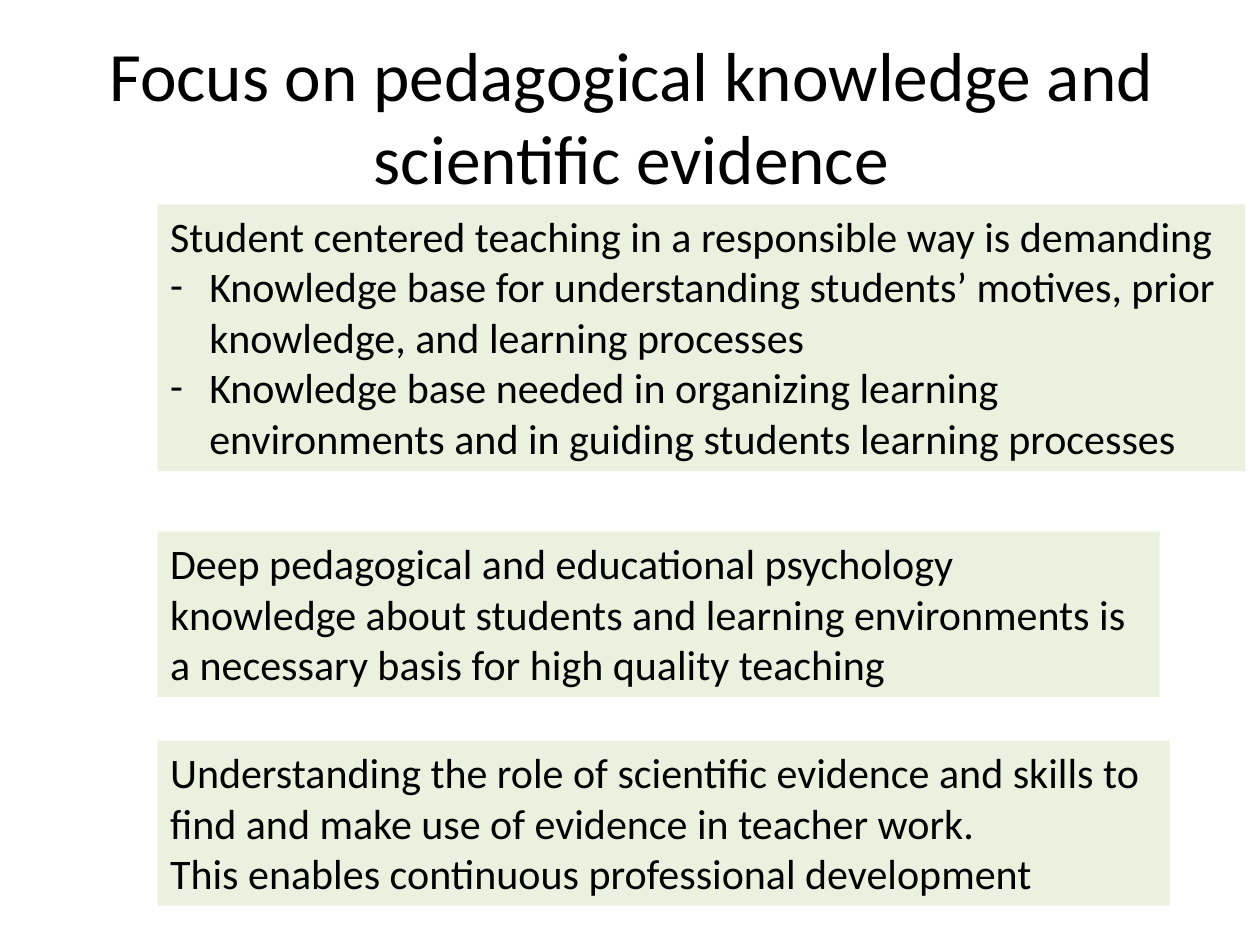
from lxml import etree
from pptx import Presentation
from pptx import util as u
from pptx.dml.color import RGBColor
from pptx.enum import text
from pptx.oxml.ns import qn

BLACK = RGBColor(0x00, 0x00, 0x00)
PALE_GREEN = RGBColor(0xEB, 0xF1, 0xDE)
PANEL_LEFT = 3.18


class SlideBuilder:
    font = "Calibri"
    title_size = 39.6
    body_size = 24
    hanging = u.Cm(0.79)

    def __init__(self, deck):
        self.slide = deck.slides.add_slide(deck.slide_layouts[6])

    def set_lines(self, box, lines, size):
        """Fill a box with one paragraph per line and style its runs."""
        frame = box.text_frame
        frame.word_wrap = True
        frame.text = "\n".join(lines)
        for paragraph in frame.paragraphs:
            for run in paragraph.runs:
                run.font.name = self.font
                run.font.size = u.Pt(size)
                run.font.color.rgb = BLACK
        return frame

    def add_box(self, left, top, width, height):
        return self.slide.shapes.add_textbox(
            u.Cm(left), u.Cm(top), u.Cm(width), u.Cm(height))

    def title(self, wording, *place):
        frame = self.set_lines(self.add_box(*place), [wording], self.title_size)
        frame.vertical_anchor = text.MSO_ANCHOR.MIDDLE
        frame.paragraphs[0].alignment = text.PP_ALIGN.CENTER

    def panel(self, lines, top, width, height, dashes=()):
        """Add a green panel; dashes are listed below its plain lines."""
        box = self.add_box(PANEL_LEFT, top, width, height)
        box.fill.solid()
        box.fill.fore_color.rgb = PALE_GREEN
        frame = self.set_lines(box, [*lines, *dashes], self.body_size)
        frame.auto_size = text.MSO_AUTO_SIZE.SHAPE_TO_FIT_TEXT
        for paragraph in frame.paragraphs[len(lines):]:
            self.dash(paragraph)

    def dash(self, paragraph):
        properties = paragraph._p.get_or_add_pPr()
        properties.set("marL", str(self.hanging))
        properties.set("indent", str(-self.hanging))
        etree.SubElement(properties, qn("a:buFont")).set("typeface", self.font)
        etree.SubElement(properties, qn("a:buChar")).set("char", "-")


def main():
    deck = Presentation()
    deck.slide_width, deck.slide_height = u.Cm(25.4), u.Cm(19.05)
    builder = SlideBuilder(deck)
    builder.title("Focus on pedagogical knowledge and scientific evidence",
                  1.3, 0.74, 22.86, 3.18)
    builder.panel(
        ["Student centered teaching in a responsible way is demanding"],
        4.12, 21.92, 5.38,
        dashes=[
            "Knowledge base for understanding students’ motives, prior "
            "knowledge, and learning processes",
            "Knowledge base needed in organizing learning environments "
            "and in guiding students learning processes",
        ])
    builder.panel(
        ["Deep pedagogical and educational psychology knowledge about "
         "students and learning environments is a necessary basis for "
         "high quality teaching"],
        10.72, 20.2, 3.33)
    builder.panel(
        ["Understanding the role of scientific evidence and skills to find "
         "and make use of evidence in teacher work.",
         "This enables continuous professional development"],
        14.93, 20.4, 3.33)
    deck.save("out.pptx")


if __name__ == "__main__":
    main()
